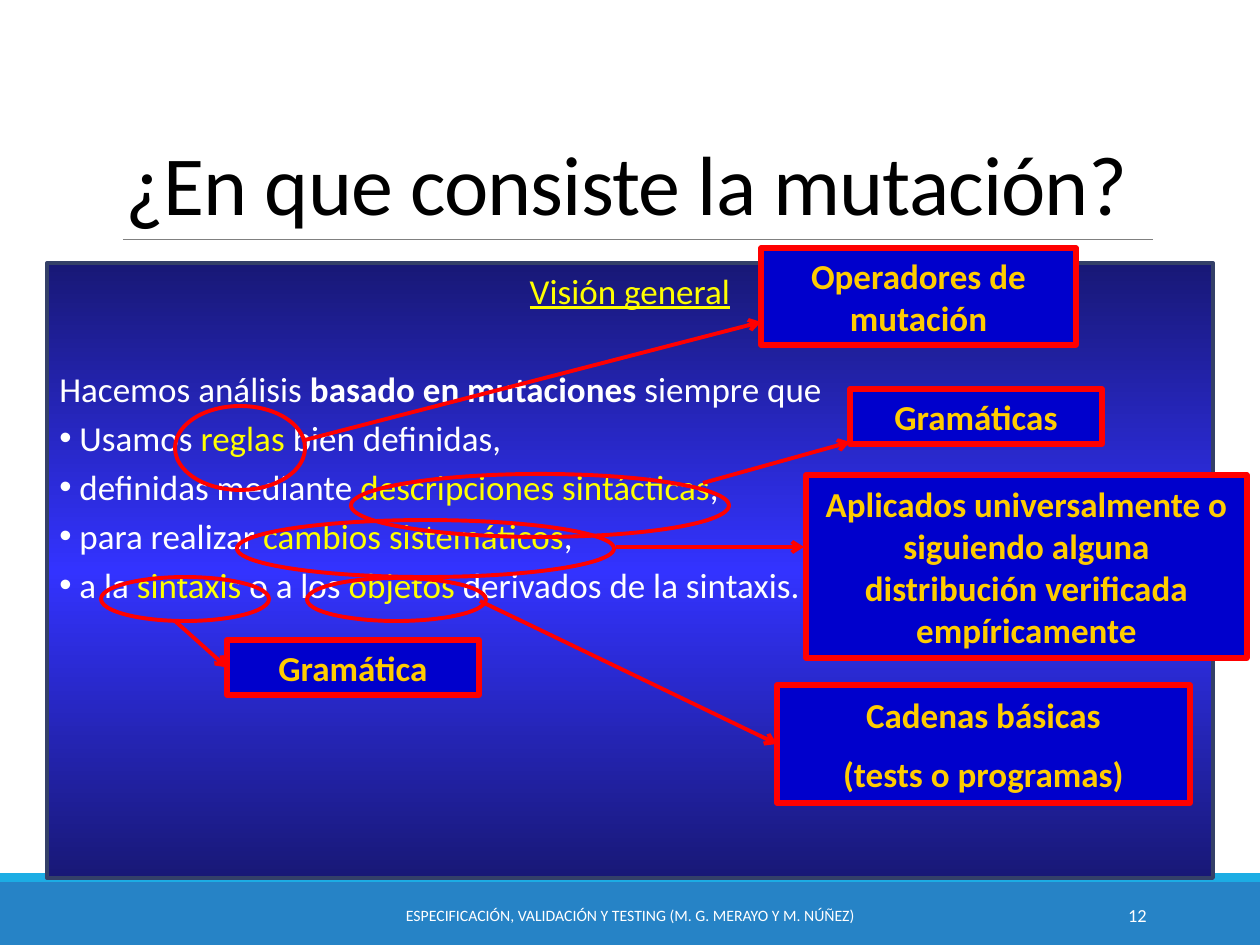
from pptx import Presentation
from pptx.dml.color import RGBColor
from pptx.enum.shapes import MSO_CONNECTOR, MSO_SHAPE
from pptx.enum.text import MSO_ANCHOR, PP_ALIGN
from pptx.oxml.ns import qn
from pptx.util import Pt
from copy import deepcopy
from lxml.etree import SubElement

SCALE = 914400 / 126
WHITE, RED, YELLOW = "FFFFFF", "FF0000", "FFFF00"
DARK, BRIGHT = "181876", "3333FF"
BULLET = 20

# Each line is a list of (text, style): "" plain, "b" bold, "y" yellow
INTRO = [("Hacemos análisis ", ""), ("basado en mutaciones ", "b"), ("siempre que", "")]
POINTS = [
    [("Usamos ", ""), ("reglas ", "y"), ("bien definidas,", "")],
    [("definidas mediante ", ""), ("descripciones sintácticas", "y"), (",", "")],
    [("para realizar ", ""), ("cambios sistemáticos", "y"), (",", "")],
    [("a la ", ""), ("sintaxis", "y"), (" o a los ", ""), ("objetos ", "y"),
     ("derivados de la sintaxis.", "")],
]

# ring box, note box, note lines, arrow start, arrow end (None: middle of left side)
LINKS = [
    ((175, 406, 130, 84), (761, 248, 315, 97), ["Operadores de mutación"],
     (305, 440), (761, 322)),
    ((351, 474, 378, 63), (850, 389, 252, 55), ["Gramáticas"],
     (703, 483), (850, 442)),
    ((101, 577, 168, 44), (227, 640, 252, 55), ["Gramática"],
     (175, 621), None),
    ((307, 578, 179, 43), (777, 685, 413, 118),
     ["Cadenas básicas", "(tests o programas)"], (480, 601), None),
    ((237, 520, 377, 57), (806, 475, 441, 183),
     ["Aplicados universalmente o siguiendo alguna distribución verificada empíricamente"],
     (616, 547), (804, 547)),
]


def px(*nums):
    return [round(n * SCALE) for n in nums]


def color(code):
    return RGBColor.from_string(code)


def style(run, size, code, bold=False):
    font = run.font
    font.name, font.size, font.bold = "Calibri", Pt(size), bold
    font.color.rgb = color(code)


def block(slide, kind, box, fill=None, edge=None, width=0):
    shape = slide.shapes.add_shape(kind, *px(*box))
    shape.shadow.inherit = False
    if fill:
        shape.fill.solid()
        shape.fill.fore_color.rgb = color(fill)
    else:
        shape.fill.background()
    if edge:
        shape.line.color.rgb = color(edge)
        shape.line.width = Pt(width)
    else:
        shape.line.fill.background()
    return shape


def join(slide, start, end, code, width):
    line = slide.shapes.add_connector(MSO_CONNECTOR.STRAIGHT, *px(*start, *end))
    line.line.color.rgb = color(code)
    line.line.width = Pt(width)
    SubElement(line._element.spPr, qn("a:effectLst"))
    return line


def label(slide, box, text, size, code, align, anchor=MSO_ANCHOR.MIDDLE):
    frame = slide.shapes.add_textbox(*px(*box)).text_frame
    frame.word_wrap = True
    frame.vertical_anchor = anchor
    frame.text = text
    para = frame.paragraphs[0]
    para.alignment = align
    style(para.runs[0], size, code)
    return para


def header(slide, box):
    x, y, w, h = box
    para = label(slide, box, "¿En que consiste la mutación?", 48, "000000",
                 PP_ALIGN.LEFT, MSO_ANCHOR.BOTTOM)
    para.line_spacing = 0.85
    para.runs[0].font._element.set("spc", "-50")
    join(slide, (x + 10, y + h), (x + w - 6, y + h), "808080", 0.5)


def footer(slide, box):
    x, y, w, h = box
    block(slide, MSO_SHAPE.RECTANGLE, (x, y + 9, w, h - 9), "2683C6")
    block(slide, MSO_SHAPE.RECTANGLE, (x, y, w, 9), "1CADE4")
    label(slide, (x + 381, y + 17, 498, 50),
          "ESPECIFICACIÓN, VALIDACIÓN Y TESTING (M. G. MERAYO Y M. NÚÑEZ)",
          9, WHITE, PP_ALIGN.CENTER)
    label(slide, (x + 1023, y + 17, 136, 50), "12", 10.5, WHITE, PP_ALIGN.RIGHT)


def shade(shape):
    """Fill top to bottom: dark, bright in the middle, dark again."""
    shape.fill.gradient()
    shape.fill.gradient_angle = 90
    first = shape.fill.gradient_stops[0]._gs
    first.addnext(deepcopy(first))
    for stop, spot, code in zip(shape.fill.gradient_stops, (0, 0.5, 1),
                                (DARK, BRIGHT, DARK)):
        stop.position = spot
        stop.color.rgb = color(code)


def write(para, parts, gap):
    para.alignment = PP_ALIGN.LEFT
    para.space_before = Pt(gap)
    for text, look in parts:
        run = para.add_run()
        run.text = text
        style(run, 20, YELLOW if look == "y" else WHITE, look == "b")


def panel(slide, box):
    shape = block(slide, MSO_SHAPE.RECTANGLE, box, DARK, "344068", 2.25)
    shade(shape)
    frame = shape.text_frame
    frame.word_wrap = True
    frame.vertical_anchor = MSO_ANCHOR.TOP
    frame.text = "Visión general"
    head = frame.paragraphs[0]
    head.alignment = PP_ALIGN.CENTER
    head.space_before = Pt(4)
    style(head.runs[0], 20, YELLOW)
    head.runs[0].font.underline = True
    write(frame.add_paragraph(), INTRO, 32)
    for parts in POINTS:
        para = frame.add_paragraph()
        write(para, parts, 4)
        props = para._p.get_or_add_pPr()
        indent = px(BULLET)[0]
        props.set("marL", str(indent))
        props.set("indent", str(-indent))
        SubElement(props, qn("a:buFont"), typeface="Arial")
        SubElement(props, qn("a:buChar"), char="•")


def link(slide, ring, box, lines, start, end):
    """Ring a term of the panel and point from it to a note."""
    block(slide, MSO_SHAPE.OVAL, ring, None, RED, 2.25)
    note = block(slide, MSO_SHAPE.RECTANGLE, box, "0000CC", RED, 3)
    frame = note.text_frame
    frame.word_wrap = True
    frame.vertical_anchor = MSO_ANCHOR.MIDDLE
    frame.text = "\n".join(lines)
    for i, para in enumerate(frame.paragraphs):
        para.alignment = PP_ALIGN.CENTER
        para.space_before = Pt(10 if i else 0)
        style(para.runs[0], 20, "FFCC00", True)
    arrow = join(slide, start, end or box[:2], RED, 2.25)
    if end is None:
        arrow.end_connect(note, 1)
    SubElement(arrow.line._get_or_add_ln(), qn("a:tailEnd"), type="arrow")


def main():
    deck = Presentation()
    deck.slide_width, deck.slide_height = px(1260, 945)
    slide = deck.slides.add_slide(deck.slide_layouts[6])
    footer(slide, (0, 873, 1260, 72))
    header(slide, (113, 39, 1046, 200))
    panel(slide, (47, 263, 1166, 615))
    for item in LINKS:
        link(slide, *item)
    deck.save("out.pptx")


if __name__ == "__main__":
    main()
